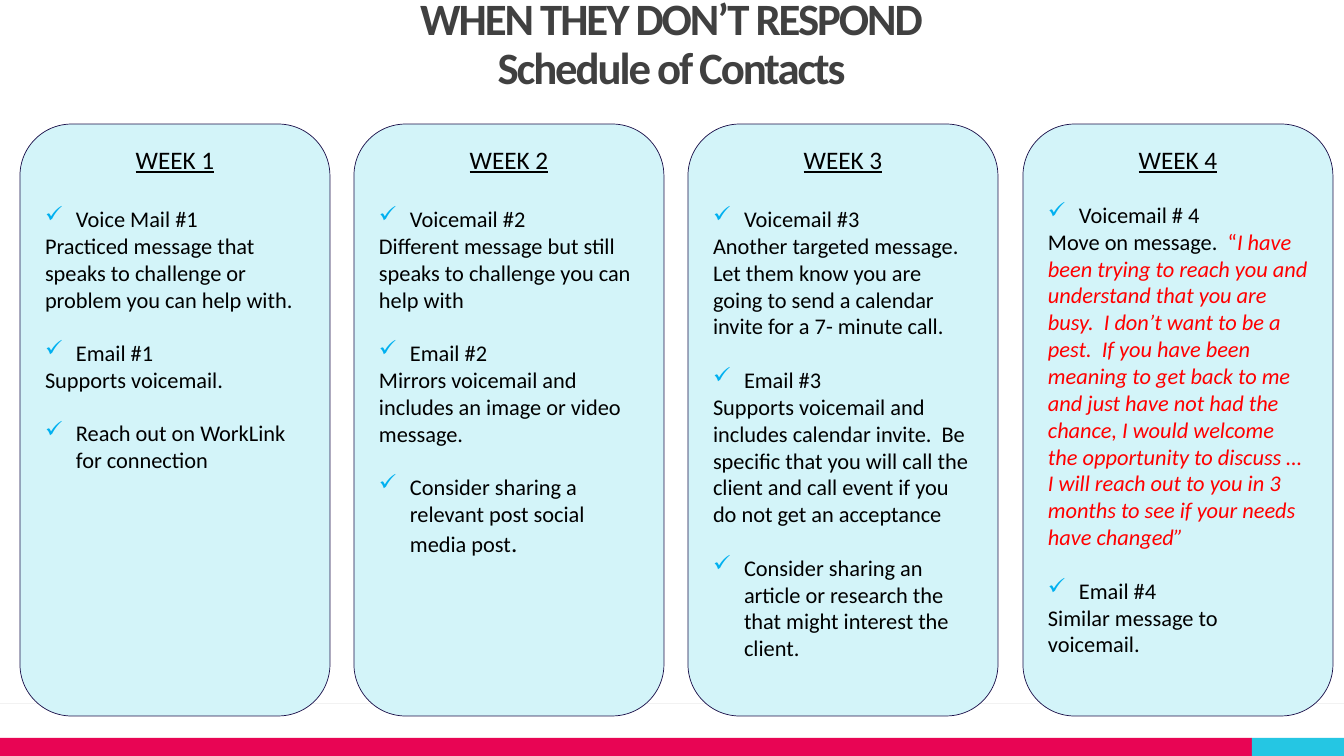
from dataclasses import dataclass

from lxml import etree
from pptx import Presentation
from pptx.dml.color import RGBColor
from pptx.enum.shapes import MSO_CONNECTOR, MSO_SHAPE
from pptx.enum.text import MSO_ANCHOR, PP_ALIGN
from pptx.oxml.ns import qn
from pptx.util import Emu, Pt

RECTANGLE = MSO_SHAPE.RECTANGLE
ROUNDED = MSO_SHAPE.ROUNDED_RECTANGLE
STRAIGHT = MSO_CONNECTOR.STRAIGHT
TOP, BOTTOM = MSO_ANCHOR.TOP, MSO_ANCHOR.BOTTOM
LEFT, CENTER = PP_ALIGN.LEFT, PP_ALIGN.CENTER
EMU_PER_PX = 914400 / 100.8
SLIDE_WIDTH, SLIDE_HEIGHT = 1344, 756


@dataclass(frozen=True)
class Theme:
    font: str = "Calibri"
    title: str = "404040"
    text: str = "000000"
    quote: str = "FF0000"
    check: str = "00B0F0"
    card: str = "D3F4F9"
    border: str = "1A0F49"
    rule: str = "F2F2F2"
    pink: str = "E80554"
    cyan: str = "25C6E3"
    title_size: int = 32
    heading_size: int = 18
    body_size: int = 16
    line_width: float = 0.5
    item_gap: int = 19
    heading_gap: int = 22


THEME = Theme()


@dataclass(frozen=True)
class Box:
    left: int
    top: int
    width: int
    height: int

    def emu(self) -> tuple[Emu, ...]:
        return tuple(px(n) for n in (self.left, self.top, self.width, self.height))


@dataclass(frozen=True)
class Span:
    text: str
    color: str | None = None
    italic: bool | None = None
    size: int | None = None


@dataclass(frozen=True)
class Item:
    label: tuple[Span, ...]
    detail: tuple[Span, ...] = ()


@dataclass(frozen=True)
class Week:
    heading: str
    items: tuple[Item, ...]
    heading_gap: int = THEME.heading_gap


def item(label: str, detail: str = "") -> Item:
    return Item((Span(label),), (Span(detail),) if detail else ())


WEEKS = (
    Week("WEEK 1", (
        item("Voice Mail #1", "Practiced message that speaks to challenge or problem you can help with."),
        item("Email #1", "Supports voicemail."),
        item("Reach out on WorkLink for connection"),
    )),
    Week("WEEK 2", (
        item("Voicemail #2", "Different message but still speaks to challenge you can help with"),
        item("Email #2", "Mirrors voicemail and includes an image or video message."),
        Item((Span("Consider sharing a relevant post social media post"),
              Span(".", size=THEME.heading_size))),
    )),
    Week("WEEK 3", (
        item("Voicemail #3", "Another targeted message.  Let them know you are going to send "
             "a calendar invite for a 7- minute call."),
        item("Email #3", "Supports voicemail and includes calendar invite.  Be specific that you "
             "will call the client and call event if you do not get an acceptance"),
        item("Consider sharing an article or research the that might interest the client."),
    )),
    Week("WEEK 4", (
        Item((Span("Voicemail # 4"),), (
            Span("Move on message.  "),
            Span("“", THEME.quote),
            Span("I have been trying to reach you and understand that you are busy.  I don’t want "
                 "to be a pest.  If you have been meaning to get back to me and just have not had "
                 "the chance, I would welcome the opportunity to discuss … I will reach out to you "
                 "in 3 months to see if your needs have changed”", THEME.quote, True),
        )),
        item("Email #4", "Similar message to voicemail."),
    ), THEME.item_gap),
)
TITLE_LINES = ("WHEN THEY DON’T RESPOND", "Schedule of Contacts")
TITLE_BOX = Box(47, 47, 1249, 47)
BANDS = ((Box(0, 738, 1252, 18), THEME.pink), (Box(1252, 738, 92, 18), THEME.cyan))
RULE_TOP = 703
FIRST_CARD = Box(20, 124, 310, 592)
LAST_CARD_LEFT = 1023
CHECK_INDENT = 31


def px(length: int) -> Emu:
    return Emu(round(length * EMU_PER_PX))


def rgb(color: str) -> RGBColor:
    return RGBColor.from_string(color)


def style(paragraph, size: int, color: str, align=LEFT) -> None:
    paragraph.alignment = align
    font = paragraph.font
    font.name, font.size, font.color.rgb = THEME.font, Pt(size), rgb(color)


def add_spans(paragraph, spans: tuple[Span, ...]) -> None:
    for span in spans:
        run = paragraph.add_run()
        run.text = span.text
        if span.color:
            run.font.color.rgb = rgb(span.color)
        if span.italic:
            run.font.italic = True
        if span.size:
            run.font.size = Pt(span.size)


def add_check(paragraph) -> None:
    properties = paragraph._p.get_or_add_pPr()
    properties.set("marL", str(px(CHECK_INDENT)))
    properties.set("indent", str(-px(CHECK_INDENT)))
    color = etree.SubElement(properties, qn("a:buClr"))
    etree.SubElement(color, qn("a:srgbClr"), val=THEME.check)
    etree.SubElement(properties, qn("a:buChar"), char="✓")


def add_block(slide, kind, box: Box, fill: str, border: str | None = None):
    shape = slide.shapes.add_shape(kind, *box.emu())
    shape.shadow.inherit = False
    shape.fill.solid()
    shape.fill.fore_color.rgb = rgb(fill)
    if border:
        shape.line.color.rgb = rgb(border)
        shape.line.width = Pt(THEME.line_width)
    else:
        shape.line.fill.background()
    return shape


def add_rule(slide) -> None:
    rule = slide.shapes.add_connector(STRAIGHT, px(SLIDE_WIDTH), px(RULE_TOP), px(0), px(RULE_TOP))
    rule.line.color.rgb = rgb(THEME.rule)
    rule.line.width = Pt(THEME.line_width)
    etree.SubElement(rule._element.spPr, qn("a:effectLst"))


def add_title(slide) -> None:
    frame = slide.shapes.add_textbox(*TITLE_BOX.emu()).text_frame
    frame.word_wrap, frame.vertical_anchor = True, BOTTOM
    frame.margin_left = frame.margin_right = frame.margin_top = frame.margin_bottom = 0
    frame.text = "\n".join(TITLE_LINES)
    for paragraph in frame.paragraphs:
        style(paragraph, THEME.title_size, THEME.title, CENTER)
        paragraph.font.bold = True
        paragraph.line_spacing = 0.9
        for run in paragraph.runs:
            run._r.get_or_add_rPr().set("spc", "-150")


def add_week(slide, week: Week, box: Box) -> None:
    frame = add_block(slide, ROUNDED, box, THEME.card, THEME.border).text_frame
    frame.word_wrap, frame.vertical_anchor = True, TOP
    heading = frame.paragraphs[0]
    heading.text = week.heading
    style(heading, THEME.heading_size, THEME.text, CENTER)
    heading.font.underline = True
    for index, entry in enumerate(week.items):
        label = frame.add_paragraph()
        add_check(label)
        label.space_before = Pt(THEME.item_gap if index else week.heading_gap)
        style(label, THEME.body_size, THEME.text)
        add_spans(label, entry.label)
        if entry.detail:
            detail = frame.add_paragraph()
            style(detail, THEME.body_size, THEME.text)
            add_spans(detail, entry.detail)


def main() -> None:
    """Build the four-week contact schedule slide."""
    presentation = Presentation()
    presentation.slide_width, presentation.slide_height = px(SLIDE_WIDTH), px(SLIDE_HEIGHT)
    slide = presentation.slides.add_slide(presentation.slide_layouts[6])
    for box, color in BANDS:
        add_block(slide, RECTANGLE, box, color)
    add_rule(slide)
    add_title(slide)
    card = FIRST_CARD
    for index, week in enumerate(WEEKS):
        left = card.left + (LAST_CARD_LEFT - card.left) * index // (len(WEEKS) - 1)
        add_week(slide, week, Box(left, card.top, card.width, card.height))
    presentation.save("out.pptx")


if __name__ == "__main__":
    main()
